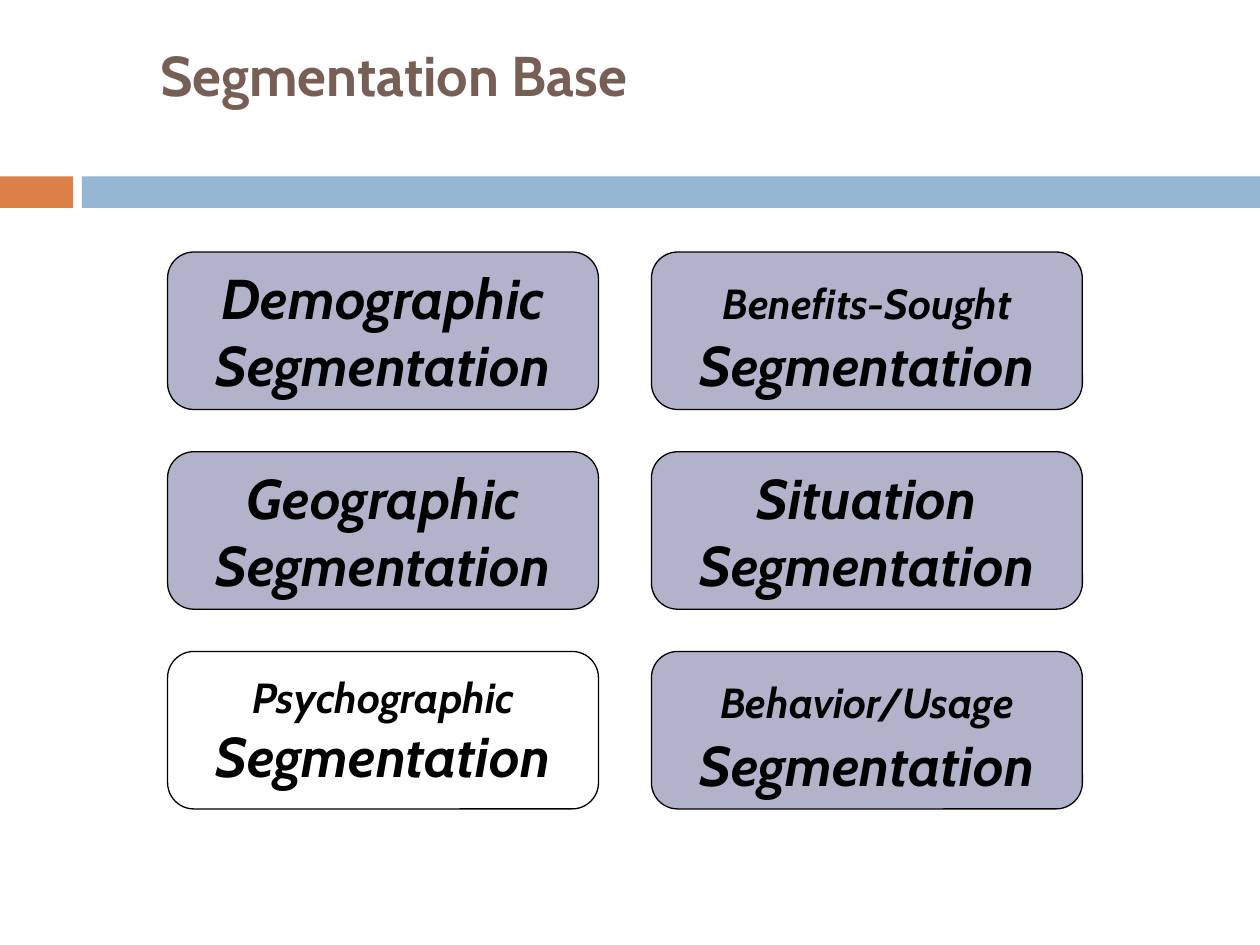
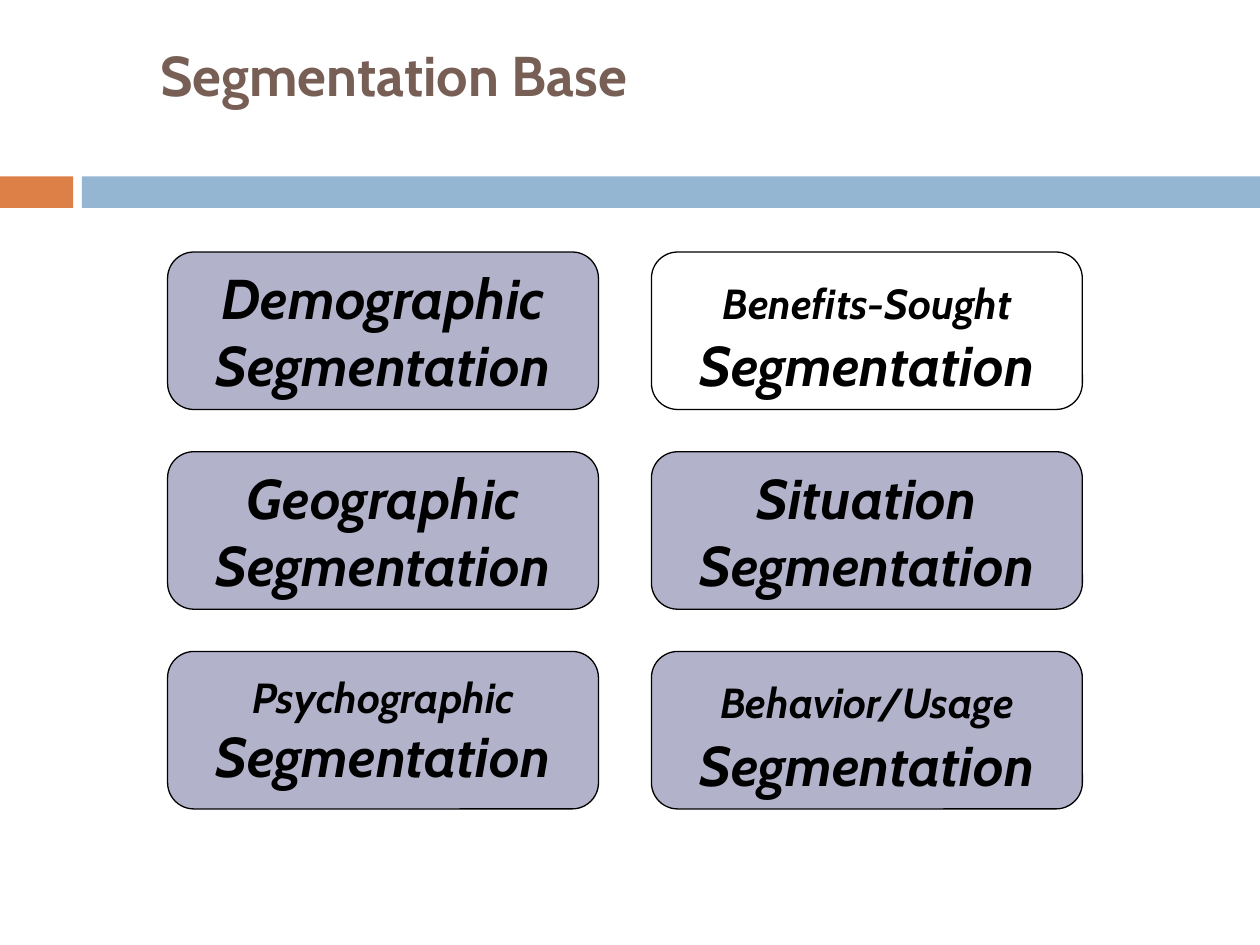
from lxml.etree import SubElement
from pptx import Presentation
from pptx.dml.color import RGBColor
from pptx.enum.shapes import MSO_SHAPE as SHAPE
from pptx.enum.text import MSO_ANCHOR as ANCHOR, PP_ALIGN as ALIGN
from pptx.oxml import parse_xml
from pptx.oxml.ns import nsdecls, qn
from pptx.util import Inches, Pt

FONT = "Cabin"
COLORS = {
    "orange": "DD8047",
    "blue": "94B6D2",
    "title": "775F55",
    "violet": "666699",
    "white": "FFFFFF",
    "black": "000000",
}

TITLE = "Segmentation Base"
# Each base: rows from top to bottom, columns from left to right; runs are (text, size).
BASES = [
    [[("Demographic Segmentation", 32)],
     [("Benefits-Sought", 24), (" Segmentation", 32)]],
    [[("Geographic Segmentation", 32)],
     [("Situation Segmentation", 32)]],
    [[("Psychographic ", 24), ("Segmentation", 32)],
     [("Behavior/Usage", 24), (" Segmentation", 32)]],
]
HIGHLIGHTS = [(2, 0), (0, 1)]  # (row, column) of the white box on each slide

GRID_LEFT, GRID_TOP = 1.33, 2
COLUMN_STEP, ROW_STEP = 3.84, 1.585
BOX_WIDTH, BOX_HEIGHT = 3.42, 1.25


def rgb(name):
    return RGBColor.from_string(COLORS[name])


def add_shape(slide, kind, left, top, width, height, fill):
    s = slide.shapes.add_shape(kind, Inches(left), Inches(top), Inches(width), Inches(height))
    s.shadow.inherit = False
    s.fill.solid()
    s.fill.fore_color.rgb = rgb(fill)
    return s


def set_up_layout(layout, slide):
    """Place the title and move the two bands, drawn on the slide, to its layout."""
    title = layout.placeholders[0]
    title.left, title.top = Inches(0.17), Inches(0)
    title.width, title.height = Inches(9.5), Inches(1.17)
    bands = [(0, 0.58, "orange"), (0.65, 9.35, "blue")]
    for i, (left, width, fill) in enumerate(bands):
        s = add_shape(slide, SHAPE.RECTANGLE, left, 1.4, width, 0.25, fill)
        s.line.fill.background()
        s._element.nvSpPr.cNvPr.set("id", str(100 + i))
        layout.shapes._spTree.insert(2 + i, s._element)


def style_font(font, color):
    font.name = FONT
    font.bold = True
    font.color.rgb = rgb(color)


def add_text_shadow(run):
    shadow = parse_xml(
        f'<a:effectLst {nsdecls("a")}>'
        '<a:outerShdw blurRad="38100" dist="38100" dir="2700000" algn="tl">'
        '<a:srgbClr val="000000"><a:alpha val="43000"/></a:srgbClr>'
        '</a:outerShdw></a:effectLst>')
    run.font._element.find(qn("a:solidFill")).addnext(shadow)


def fill_title(slide):
    tf = slide.shapes.title.text_frame
    tf.vertical_anchor = ANCHOR.MIDDLE
    p = tf.paragraphs[0]
    p.alignment = ALIGN.LEFT
    p._p.get_or_add_pPr().set("marL", str(Inches(1)))
    r = p.add_run()
    r.text = TITLE
    r.font.size = Pt(32)
    style_font(r.font, "title")
    add_text_shadow(r)


def add_base_box(slide, row, column, runs, fill):
    s = add_shape(slide, SHAPE.ROUNDED_RECTANGLE, GRID_LEFT + column * COLUMN_STEP,
                  GRID_TOP + row * ROW_STEP, BOX_WIDTH, BOX_HEIGHT, fill)
    color = s._element.spPr.find(qn("a:solidFill")).find(qn("a:srgbClr"))
    SubElement(color, qn("a:alpha")).set("val", "50000")
    s.line.color.rgb = rgb("black")
    s.line.width = Pt(0.75)
    tf = s.text_frame
    tf.word_wrap = True
    tf.vertical_anchor = ANCHOR.MIDDLE
    p = tf.paragraphs[0]
    p.alignment = ALIGN.CENTER
    style_font(p.font, "black")
    p.font.italic = True
    spacing = parse_xml(f'<a:spcBef {nsdecls("a")}><a:spcPct val="50000"/></a:spcBef>')
    p._p.get_or_add_pPr().insert(0, spacing)
    for text, size in runs:
        r = p.add_run()
        r.text = text
        r.font.size = Pt(size)


def main():
    prs = Presentation()
    prs.slide_width, prs.slide_height = Inches(10), Inches(7.5)
    layout = prs.slide_layouts[5]
    for i, highlight in enumerate(HIGHLIGHTS):
        slide = prs.slides.add_slide(layout)
        if i == 0:
            set_up_layout(layout, slide)
        fill_title(slide)
        for row, bases in enumerate(BASES):
            for column, runs in enumerate(bases):
                fill = "white" if (row, column) == highlight else "violet"
                add_base_box(slide, row, column, runs, fill)
    prs.save("out.pptx")


if __name__ == "__main__":
    main()
